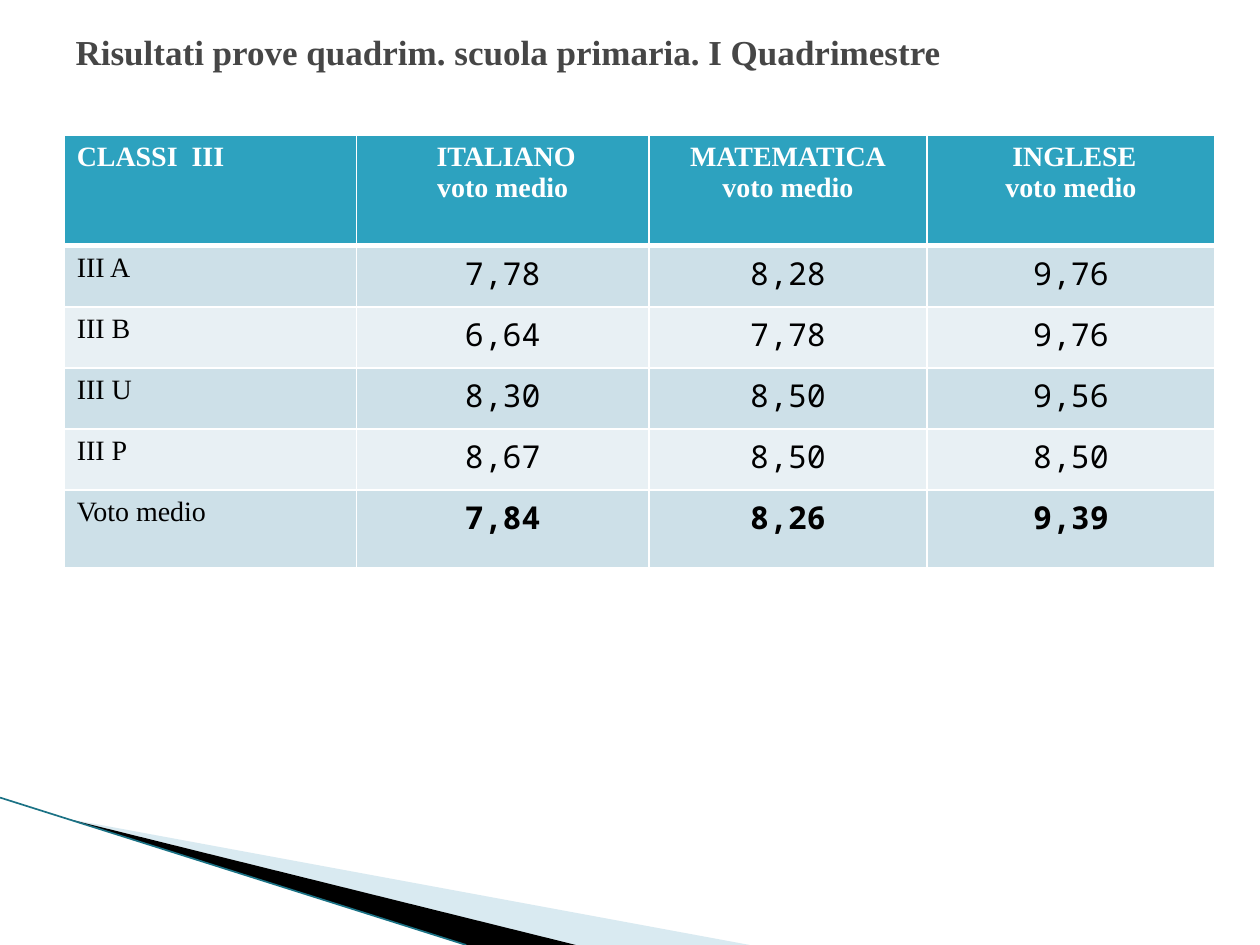
from lxml import etree
from pptx import Presentation
from pptx import util as u
from pptx.dml.color import RGBColor
from pptx.enum import shapes, text
from pptx.oxml.ns import qn

WIDTH, HEIGHT = 10, 7.5
COLOURS = {
    "title": "464646", "header": "2DA2BF", "white": "FFFFFF", "black": "000000",
    "odd": "CDE0E8", "even": "E8F0F4", "pale": "A0CBDC", "edge": "1B7285",
}
SERIF, MONO = "Times New Roman", "Noto Sans Mono"

COLUMNS = [2.32, 2.32, 2.21, 2.28]
ROWS = [0.88] + [0.485] * 4 + [0.62]
HEADINGS = ["CLASSI  III", " ITALIANO\nvoto medio",
            "MATEMATICA\nvoto medio", " INGLESE\nvoto medio"]
RESULTS = [
    ["III A", "7,78", "8,28", "9,76"],
    ["III B", "6,64", "7,78", "9,76"],
    ["III U", "8,30", "8,50", "9,56"],
    ["III P", "8,67", "8,50", "8,50"],
    ["Voto medio", "7,84", "8,26", "9,39"],
]


def colour(name):
    return RGBColor.from_string(COLOURS[name])


def write(frame, lines, size, font, ink, bold=False, align=text.PP_ALIGN.LEFT):
    for index, line in enumerate(lines.split("\n")):
        para = frame.add_paragraph() if index else frame.paragraphs[0]
        para.alignment = align
        span = para.add_run()
        span.text = line
        span.font.size, span.font.name, span.font.bold = u.Pt(size), font, bold
        span.font.color.rgb = colour(ink)


def set_borders(cell, bottom):
    properties = cell._tc.get_or_add_tcPr()
    for index, (side, points) in enumerate(
            [("lnL", 1), ("lnR", 1), ("lnT", 1), ("lnB", bottom)]):
        line = etree.Element(qn("a:" + side), w=str(u.Pt(points)))
        fill = etree.SubElement(line, qn("a:solidFill"))
        etree.SubElement(fill, qn("a:srgbClr"), val=COLOURS["white"])
        properties.insert(index, line)


def add_wedge(page, points, fill, opacity=None):
    builder = page.shapes.build_freeform(
        u.Inches(points[0][0]), u.Inches(points[0][1]), scale=1.0)
    builder.add_line_segments(
        [(u.Inches(x), u.Inches(y)) for x, y in points[1:]], close=True)
    wedge = builder.convert_to_shape()
    wedge.shadow.inherit = False
    wedge.line.fill.background()
    wedge.fill.solid()
    wedge.fill.fore_color.rgb = colour(fill)
    if opacity:
        tint = wedge._element.spPr.find(".//" + qn("a:srgbClr"))
        etree.SubElement(tint, qn("a:alpha"), val=str(opacity * 1000))


def add_corner(page, left, top, width, height):
    """Wedges fanning out from a point near the left edge to the bottom."""
    bottom = top + height
    tip = (left + 0.54, top + 0.17)
    add_wedge(page, [tip, (left + width, bottom), (left + 4.56, bottom)], "pale", 40)
    add_wedge(page, [tip, (left + 4.57, bottom), (left + 3.7, bottom)], "black")
    edge = page.shapes.add_connector(
        shapes.MSO_CONNECTOR.STRAIGHT, u.Inches(left), u.Inches(top),
        u.Inches(left + 3.7), u.Inches(bottom))
    edge.line.color.rgb = colour("edge")
    edge.line.width = u.Pt(0.95)
    etree.SubElement(edge._element.spPr, qn("a:effectLst"))


def add_title(page, left, top, width, height):
    title = page.shapes.title
    title.left, title.top = u.Inches(left), u.Inches(top)
    title.width, title.height = u.Inches(width), u.Inches(height)
    frame = title.text_frame
    frame.word_wrap = True
    frame.vertical_anchor = text.MSO_ANCHOR.MIDDLE
    write(frame, "Risultati prove quadrim. scuola primaria. I Quadrimestre",
          20, SERIF, "title", bold=True)


def add_results(page, left, top):
    table = page.shapes.add_table(
        len(ROWS), len(COLUMNS), u.Inches(left), u.Inches(top),
        u.Inches(sum(COLUMNS)), u.Inches(sum(ROWS))).table
    for column, width in zip(table.columns, COLUMNS):
        column.width = u.Inches(width)
    for row, height in zip(table.rows, ROWS):
        row.height = u.Inches(height)

    for r, values in enumerate([HEADINGS] + RESULTS):
        header, last = r == 0, r == len(RESULTS)
        fill = "header" if header else "odd" if r % 2 else "even"
        for c, value in enumerate(values):
            cell = table.cell(r, c)
            cell.fill.solid()
            cell.fill.fore_color.rgb = colour(fill)
            set_borders(cell, 3 if header else 1)
            number = c > 0 and not header
            write(cell.text_frame, value, 18 if number else 16,
                  MONO if number else SERIF, "white" if header else "black",
                  bold=header or (last and number),
                  align=text.PP_ALIGN.CENTER if c else text.PP_ALIGN.LEFT)


def main():
    deck = Presentation()
    deck.slide_width, deck.slide_height = u.Inches(WIDTH), u.Inches(HEIGHT)
    page = deck.slides.add_slide(deck.slide_layouts[5])
    add_corner(page, 0, 6.33, 5.95, HEIGHT - 6.33)
    add_results(page, 0.51, 1.07)
    add_title(page, 0.5, -0.5, 9, 1.81)
    deck.save("out.pptx")


if __name__ == "__main__":
    main()
